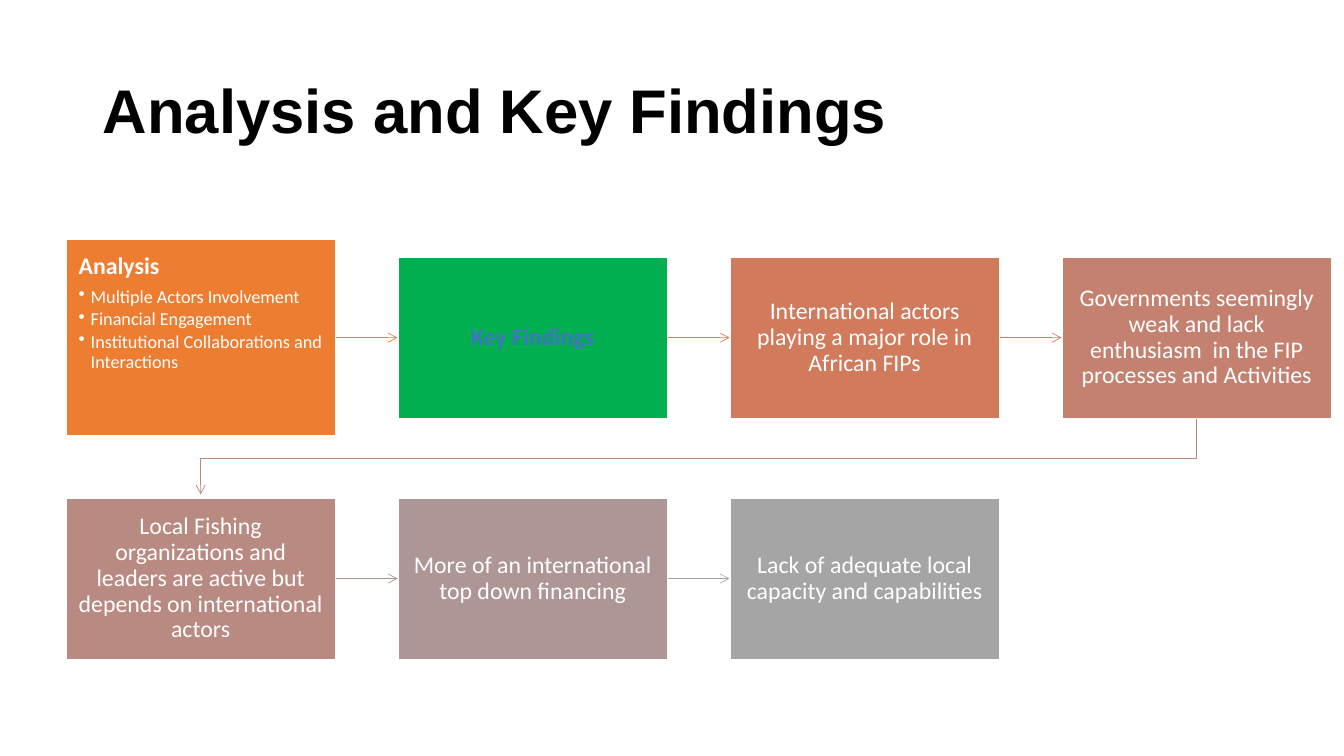
from lxml.etree import SubElement
from pptx import Presentation
from pptx.dml.color import RGBColor
from pptx.enum.shapes import MSO_CONNECTOR, MSO_SHAPE
from pptx.enum.text import MSO_ANCHOR, MSO_AUTO_SIZE, PP_ALIGN
from pptx.oxml.ns import qn
from pptx.util import Inches, Pt

COLORS = {
    "black": "000000", "white": "FFFFFF", "blue": "4472C4",
    "orange": "ED7D31", "green": "00B050", "terracotta": "D17B5C",
    "rose": "C48170", "dusty": "B98A82", "mauve": "AE9694", "gray": "A5A5A5",
    "arrow_1": "ED7D31", "arrow_2": "DC7A4B", "arrow_3": "CC7D64",
    "arrow_4": "BD867B", "arrow_5": "B09391", "arrow_6": "A5A5A5",
}
BOX_WIDTH, BOX_HEIGHT, ANALYSIS_HEIGHT = 2.68, 1.61, 1.95
LEFT, COLUMN_STEP, COLUMNS = 0.65, 3.293, 4
ROW_CENTERS = [3.35, 5.74]

# Fill, text colour, bold, text of each step in reading order
STEPS = [
    ("orange", "white", True, "Analysis"),
    ("green", "blue", True, "Key Findings"),
    ("terracotta", "white", False, "International actors playing a major role in African FIPs"),
    ("rose", "white", False,
     "Governments seemingly weak and lack enthusiasm  in the FIP processes and Activities"),
    ("dusty", "white", False,
     "Local Fishing organizations and leaders are active but depends on international actors"),
    ("mauve", "white", False, "More of an international top down financing"),
    ("gray", "white", False, "Lack of adequate local capacity and capabilities"),
]
ANALYSIS_POINTS = [
    "Multiple Actors Involvement",
    "Financial Engagement",
    "Institutional Collaborations and Interactions",
]


def write(paragraph, text, color, **font_format):
    run = paragraph.add_run()
    run.text = text
    for name, value in font_format.items():
        setattr(run.font, name, value)
    run.font.color.rgb = RGBColor.from_string(COLORS[color])
    paragraph.line_spacing = 0.9


def style_arrow(arrow, color):
    arrow.line.color.rgb = RGBColor.from_string(COLORS[color])
    arrow.line.width = Pt(0.5)
    SubElement(arrow.line._get_or_add_ln(), qn("a:tailEnd"), type="arrow")
    properties = arrow._element.spPr
    if properties.find(qn("a:effectLst")) is None:
        SubElement(properties, qn("a:effectLst"))


presentation = Presentation()
presentation.slide_width = Inches(13.33)
presentation.slide_height = Inches(7.5)
slide = presentation.slides.add_slide(presentation.slide_layouts[5])

# Title
title = slide.shapes.title
title_place = {"left": 0.92, "top": 0.4, "width": 11.5, "height": 1.45}
for name, value in title_place.items():
    setattr(title, name, Inches(value))
title.text_frame.auto_size = MSO_AUTO_SIZE.NONE
title.text_frame.vertical_anchor = MSO_ANCHOR.MIDDLE
heading = title.text_frame.paragraphs[0]
heading.alignment = PP_ALIGN.LEFT
write(heading, "Analysis and Key Findings", "black", name="Arial", size=Pt(44), bold=True)

# Step boxes
boxes = []
for index, (fill, text_color, bold, text) in enumerate(STEPS):
    row, column = divmod(index, COLUMNS)
    height = BOX_HEIGHT if index else ANALYSIS_HEIGHT
    box = slide.shapes.add_shape(
        MSO_SHAPE.RECTANGLE, Inches(LEFT + column * COLUMN_STEP),
        Inches(ROW_CENTERS[row] - height / 2), Inches(BOX_WIDTH), Inches(height))
    box.shadow.inherit = False
    box.fill.solid()
    box.fill.fore_color.rgb = RGBColor.from_string(COLORS[fill])
    box.line.color.rgb = RGBColor.from_string(COLORS["white"])
    box.line.width = Pt(1.5)
    frame_format = {
        "margin_left": Inches(0.13), "margin_right": Inches(0.13),
        "margin_top": Inches(0.14), "margin_bottom": Inches(0.14),
        "word_wrap": True,
        "vertical_anchor": MSO_ANCHOR.MIDDLE if index else MSO_ANCHOR.TOP,
    }
    for name, value in frame_format.items():
        setattr(box.text_frame, name, value)
    paragraph = box.text_frame.paragraphs[0]
    paragraph.alignment = PP_ALIGN.CENTER if index else PP_ALIGN.LEFT
    write(paragraph, text, text_color, name="Calibri", size=Pt(17), bold=bold)
    boxes.append(box)

# Bulleted points of the analysis box
analysis_frame = boxes[0].text_frame
analysis_frame.paragraphs[0].space_after = Pt(6)
for point in ANALYSIS_POINTS:
    paragraph = analysis_frame.add_paragraph()
    paragraph.level = 1
    paragraph.alignment = PP_ALIGN.LEFT
    paragraph.space_after = Pt(2)
    write(paragraph, point, "white", name="Calibri", size=Pt(13), bold=False)
    properties = paragraph._p.get_or_add_pPr()
    properties.set("marL", str(Inches(0.12)))
    properties.set("indent", str(Inches(-0.12)))
    SubElement(properties, qn("a:buChar"), char="•")

# Arrows from each box to the next
for number, (start, end) in enumerate(zip(boxes, boxes[1:]), 1):
    if number % COLUMNS:
        arrow = slide.shapes.add_connector(MSO_CONNECTOR.STRAIGHT, 0, 0, 0, 0)
        arrow.begin_connect(start, 3)
        arrow.end_connect(end, 1)
    else:
        # Bent arrow to the start of the next row
        start_x = start.left + start.width // 2
        end_x = end.left + end.width // 2
        bend_y = Inches(4.55)
        builder = slide.shapes.build_freeform(start_x, start.top + start.height)
        builder.add_line_segments(
            [(start_x, bend_y), (end_x, bend_y), (end_x, end.top - Inches(0.03))], close=False)
        arrow = builder.convert_to_shape()
        arrow.fill.background()
    style_arrow(arrow, f"arrow_{number}")

presentation.save("out.pptx")
